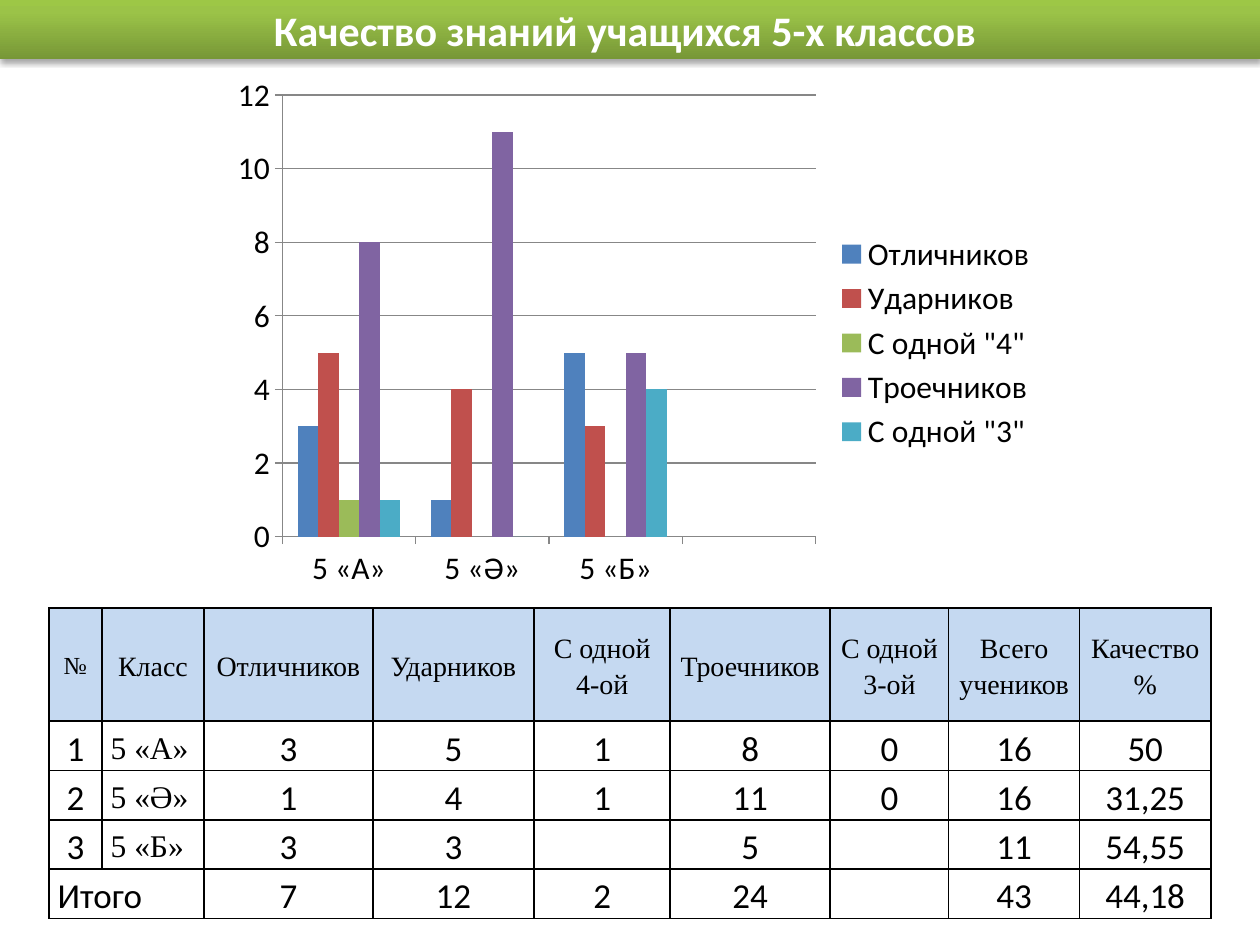
from lxml.etree import SubElement
from pptx import Presentation
from pptx.chart.data import CategoryChartData
from pptx.dml.color import RGBColor
from pptx.enum.chart import XL_CHART_TYPE as ChartType, XL_LEGEND_POSITION as LegendPosition
from pptx.enum.chart import XL_TICK_MARK as TickMark
from pptx.enum.shapes import MSO_SHAPE as Shape
from pptx.enum.text import MSO_ANCHOR as Anchor, PP_ALIGN as Align
from pptx.oxml import parse_xml
from pptx.oxml.ns import nsdecls, qn
from pptx.util import Pt

COLORS = {
    "text": "000000",
    "title": "FFFFFF",
    "header": "C5D9F1",
    "body": "FFFFFF",
    "axis": "878787",
    "bar_bottom": "779737",
    "bar_middle": "9BC348",
    "bar_top": "9DC746",
}
SERIES = [
    ("Отличников", (3, 1, 5, None), "4F81BD"),
    ("Ударников", (5, 4, 3, None), "C0504D"),
    ('С одной "4"', (1, None, None, None), "9BBB59"),
    ("Троечников", (8, 11, 5, None), "8064A2"),
    ('С одной "3"', (1, 0, 4, None), "4BACC6"),
]
CLASSES = ["5 «А»", "5 «Ә»", "5 «Б»", ""]
ROWS = [
    ["№", "Класс", "Отличников", "Ударников", "С одной 4-ой", "Троечников",
     "С одной 3-ой", "Всего учеников", "Качество %"],
    ["1", "5 «А»", "3", "5", "1", "8", "0", "16", "50"],
    ["2", "5 «Ә»", "1", "4", "1", "11", "0", "16", "31,25"],
    ["3", "5 «Б»", "3", "3", "", "5", "", "11", "54,55"],
    ["Итого", "", "7", "12", "2", "24", "", "43", "44,18"],
]
COLUMN_SHARES = [0.42, 0.81, 1.34, 1.28, 1.08, 1.27, 0.94, 1.04, 1.04]
HEADER_SHARE = 0.365


def rgb(name):
    return RGBColor.from_string(COLORS[name])


def apply(target, values):
    for name, value in values.items():
        setattr(target, name, value)


def style_font(font, color="text", **values):
    apply(font, values)
    font.color.rgb = rgb(color)


def add_title_bar(slide, left, top, width, height):
    shape = slide.shapes.add_shape(Shape.RECTANGLE, Pt(left), Pt(top), Pt(width), Pt(height))
    shape.line.fill.background()
    properties = shape._element.spPr
    stops = "".join(
        f'<a:gs pos="{position * 1000}"><a:srgbClr val="{COLORS[name]}"/></a:gs>'
        for position, name in ((0, "bar_bottom"), (80, "bar_middle"), (100, "bar_top"))
    )
    gradient = parse_xml(
        f'<a:gradFill {nsdecls("a")} rotWithShape="1"><a:gsLst>{stops}</a:gsLst>'
        '<a:lin ang="16200000" scaled="0"/></a:gradFill>'
    )
    properties.find(qn("a:prstGeom")).addnext(gradient)
    properties.append(parse_xml(
        f'<a:effectLst {nsdecls("a")}><a:outerShdw blurRad="{Pt(3.1)}" dist="{Pt(1.8)}" '
        'dir="5400000" rotWithShape="0"><a:srgbClr val="000000"><a:alpha val="35000"/>'
        '</a:srgbClr></a:outerShdw></a:effectLst>'
    ))
    frame = shape.text_frame
    apply(frame, {"vertical_anchor": Anchor.MIDDLE, "word_wrap": True})
    paragraph = frame.paragraphs[0]
    paragraph.alignment = Align.CENTER
    run = paragraph.add_run()
    run.text = "Качество знаний учащихся 5-х классов "
    style_font(run.font, "title", name="Calibri", size=Pt(24), bold=True)


def add_grades_chart(slide, left, top, width, height):
    data = CategoryChartData()
    data.categories = CLASSES
    for name, values, _ in SERIES:
        data.add_series(name, values)
    chart = slide.shapes.add_chart(
        ChartType.COLUMN_CLUSTERED, Pt(left), Pt(top), Pt(width), Pt(height), data
    ).chart
    apply(chart, {"has_title": False, "has_legend": True})
    apply(chart.legend, {"position": LegendPosition.RIGHT, "include_in_layout": False})
    style_font(chart.font, name="Calibri", size=Pt(18))

    plot = chart.plots[0]
    apply(plot, {"gap_width": 150, "overlap": 0, "vary_by_categories": False})
    for series, (_, _, color) in zip(plot.series, SERIES):
        series.format.fill.solid()
        series.format.fill.fore_color.rgb = RGBColor.from_string(color)

    apply(chart.value_axis, {"minimum_scale": 0, "maximum_scale": 12, "major_unit": 2,
                             "has_major_gridlines": True})
    for axis in (chart.category_axis, chart.value_axis):
        apply(axis, {"major_tick_mark": TickMark.OUTSIDE, "minor_tick_mark": TickMark.NONE})
    for part in (chart.category_axis, chart.value_axis, chart.value_axis.major_gridlines):
        part.format.line.color.rgb = rgb("axis")
        part.format.line.width = Pt(0.75)

    area = chart._chartSpace.chart.plotArea
    for old in area.findall(qn("c:layout")):
        area.remove(old)
    layout = parse_xml(f'<c:layout {nsdecls("c")}><c:manualLayout/></c:layout>')
    settings = {"layoutTarget": "inner", "xMode": "edge", "yMode": "edge",
                "x": 0.086, "y": 0.037, "w": 0.635, "h": 0.825}
    for name, value in settings.items():
        SubElement(layout[0], qn(f"c:{name}")).set("val", str(value))
    area.insert(0, layout)


def style_cell(cell, fill):
    apply(cell, {"margin_left": Pt(5), "margin_right": Pt(5), "margin_top": 0,
                 "margin_bottom": 0, "vertical_anchor": Anchor.MIDDLE})
    cell.fill.solid()
    cell.fill.fore_color.rgb = rgb(fill)
    properties = cell._tc.get_or_add_tcPr()
    for index, side in enumerate("LRTB"):
        properties.insert(index, parse_xml(
            f'<a:ln{side} {nsdecls("a")} w="{Pt(1)}"><a:solidFill>'
            f'<a:srgbClr val="{COLORS["text"]}"/></a:solidFill></a:ln{side}>'
        ))


def cell_format(row, column):
    if row == 0:
        return "Times New Roman", 14 if column == 0 else 16, Align.CENTER
    if column == 1:
        return "Times New Roman", 18, Align.LEFT
    is_total = row == len(ROWS) - 1 and column == 0
    return "Calibri", 20, Align.LEFT if is_total else Align.CENTER


def add_results_table(slide, left, top, width, height):
    table = slide.shapes.add_table(
        len(ROWS), len(COLUMN_SHARES), Pt(left), Pt(top), Pt(width), Pt(height)
    ).table
    for column, share in zip(table.columns, COLUMN_SHARES):
        column.width = Pt(round(width * share / sum(COLUMN_SHARES), 2))
    header_height = height * HEADER_SHARE
    body_height = (height - header_height) / (len(ROWS) - 1)
    for row_index, values in enumerate(ROWS):
        table.rows[row_index].height = Pt(body_height if row_index else header_height)
        for column_index, text in enumerate(values):
            cell = table.cell(row_index, column_index)
            style_cell(cell, "body" if row_index else "header")
            if not text:
                continue
            name, size, alignment = cell_format(row_index, column_index)
            paragraph = cell.text_frame.paragraphs[0]
            apply(paragraph, {"alignment": alignment, "line_spacing": 1.15})
            run = paragraph.add_run()
            run.text = text
            style_font(run.font, name=name, size=Pt(size), bold=False)
    last = len(ROWS) - 1
    table.cell(last, 0).merge(table.cell(last, 1))


def main():
    presentation = Presentation()
    apply(presentation, {"slide_width": Pt(720), "slide_height": Pt(540)})
    slide = presentation.slides.add_slide(presentation.slide_layouts[6])
    add_results_table(slide, 28, 347.5, 664, 177)
    add_title_bar(slide, 0, 0, 720, 34)
    add_grades_chart(slide, 120, 43, 480, 306)
    presentation.save("out.pptx")


if __name__ == "__main__":
    main()
